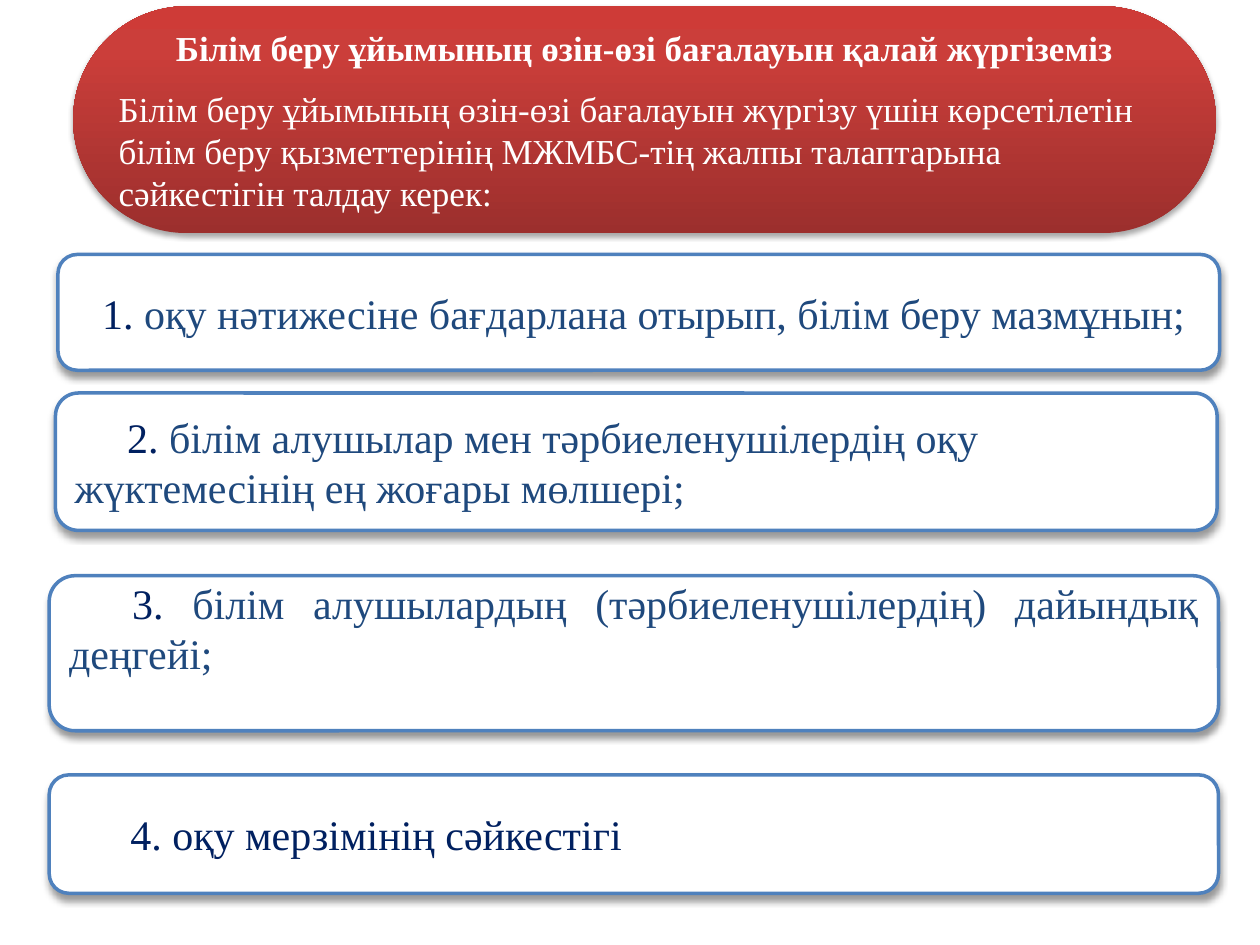
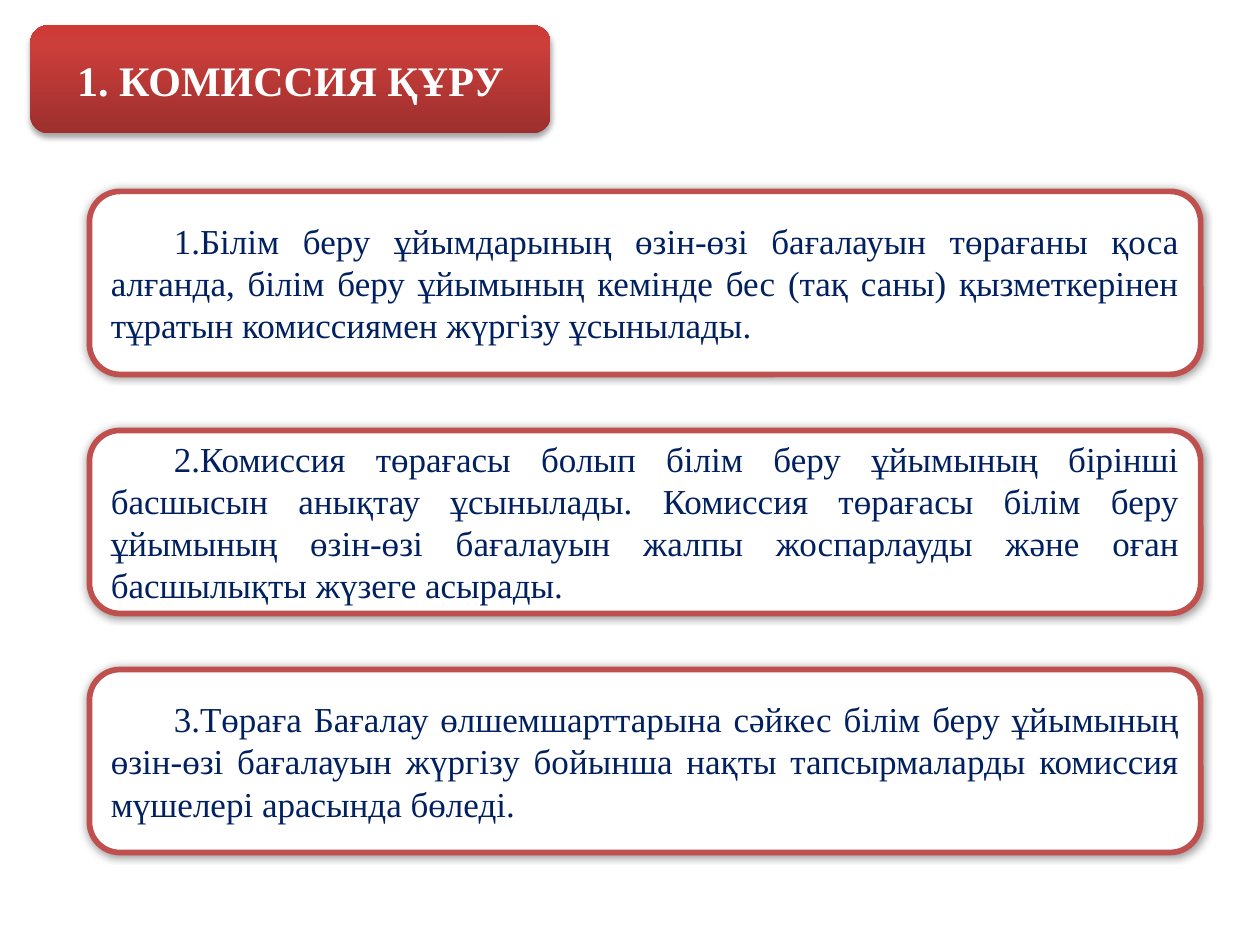
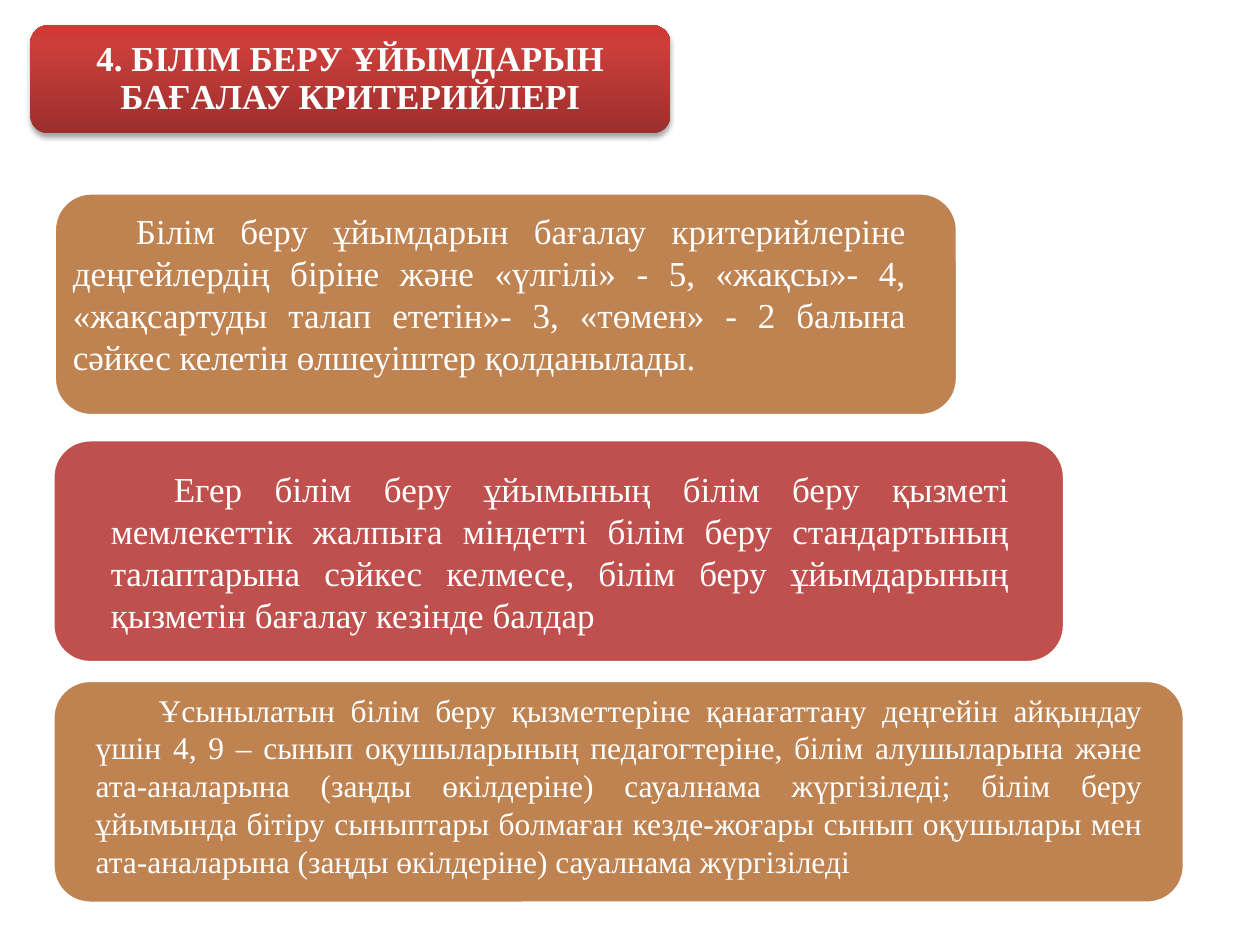
"""Builds three slides on how an education organisation assesses itself."""
from copy import deepcopy

from lxml import etree
from pptx import Presentation
from pptx.dml.color import RGBColor
from pptx.enum import shapes, text
from pptx.oxml.ns import qn
from pptx.util import Pt

FONT = "Times New Roman"
WHITE = RGBColor(0xFF, 0xFF, 0xFF)
NAVY = RGBColor(0x00, 0x20, 0x60)
STEEL = RGBColor(0x1F, 0x49, 0x7D)
BLUE = RGBColor(0x4F, 0x81, 0xBD)
RED = RGBColor(0xC0, 0x50, 0x4D)
BROWN = RGBColor(0xBE, 0x83, 0x51)
TITLE_STOPS = [(0, RGBColor(0x9C, 0x2F, 0x2D)),
               (0.8, RGBColor(0xCB, 0x3E, 0x3A)),
               (1, RGBColor(0xCE, 0x3B, 0x37))]
TITLE_SHADOW = (35, 3.1, 1.8, 90)
ITEM_SHADOW = (40, 4, 3, 90)
STEP_SHADOW = (40, 5, 0, 0)
LEFT, CENTER, JUSTIFY = (text.PP_ALIGN.LEFT, text.PP_ALIGN.CENTER,
                         text.PP_ALIGN.JUSTIFY)
INDENT = 36
INSETS = (7.2, 3.6, 7.2, 3.6)

INTRO_TITLE = "Білім беру ұйымының өзін-өзі бағалауын қалай жүргіземіз"
INTRO = ("Білім беру ұйымының өзін-өзі бағалауын жүргізу үшін көрсетілетін "
         "білім беру қызметтерінің МЖМБС-тің жалпы талаптарына сәйкестігін "
         "талдау керек:")

# box, number, wording, wording colour, alignment, indent, bottom inset
ITEMS = [
    ((33.1, 145.4, 663.8, 66.2), "1. ",
     "оқу нәтижесіне бағдарлана отырып, білім беру мазмұнын;",
     STEEL, LEFT, 15, 3.6),
    ((31.7, 224.6, 663.8, 78.5), "2. ",
     "білім алушылар мен тәрбиеленушілердің оқу жүктемесінің ең жоғары "
     "мөлшері;", STEEL, LEFT, 30, 3.6),
    ((28.1, 329, 668.2, 88.6), "3. ",
     "білім алушылардың (тәрбиеленушілердің) дайындық деңгейі;",
     STEEL, JUSTIFY, INDENT, 32.6),
    ((28.1, 442.8, 668.2, 67.7), "4. ", "оқу мерзімінің сәйкестігі",
     NAVY, JUSTIFY, INDENT, 3.6),
]

COMMISSION_TITLE = "1. КОМИССИЯ ҚҰРУ"
COMMISSION_STEPS = [
    "1.Білім беру ұйымдарының өзін-өзі бағалауын төрағаны қоса алғанда, "
    "білім беру ұйымының кемінде бес (тақ саны) қызметкерінен тұратын "
    "комиссиямен жүргізу ұсынылады.",
    "2.Комиссия төрағасы болып білім беру ұйымының бірінші басшысын анықтау "
    "ұсынылады. Комиссия төрағасы білім беру ұйымының өзін-өзі бағалауын "
    "жалпы жоспарлауды және оған басшылықты жүзеге асырады.",
    "3.Төраға Бағалау өлшемшарттарына сәйкес білім беру ұйымының өзін-өзі "
    "бағалауын жүргізу бойынша нақты тапсырмаларды комиссия мүшелері "
    "арасында бөледі.",
]

CRITERIA_TITLE = "4. БІЛІМ БЕРУ ҰЙЫМДАРЫН БАҒАЛАУ КРИТЕРИЙЛЕРІ"
# panel box, panel colour, text box, size, wording
CRITERIA = [
    ((31, 110.2, 516.2, 127.4), BROWN, (37.4, 110.2, 484.6, 115.2), 20,
     "Білім беру ұйымдарын бағалау критерийлеріне деңгейлердің біріне және "
     "«үлгілі» - 5, «жақсы»- 4, «жақсартуды талап ететін»- 3, «төмен» - 2 "
     "балына сәйкес келетін өлшеуіштер қолданылады."),
    ((30.2, 251.3, 578.2, 127.4), RED, (59, 257.8, 522, 115.2), 20,
     "Егер білім беру ұйымының білім беру қызметі мемлекеттік жалпыға "
     "міндетті білім беру стандартының талаптарына сәйкес келмесе, білім "
     "беру ұйымдарының қызметін бағалау кезінде балдар"),
    ((30.2, 388.8, 646.6, 127.4), BROWN, (50.4, 391, 607, 115.2), 18,
     "Ұсынылатын білім беру қызметтеріне қанағаттану деңгейін айқындау үшін "
     "4, 9 – сынып оқушыларының педагогтеріне, білім алушыларына және "
     "ата-аналарына (заңды өкілдеріне) сауалнама жүргізіледі; білім беру "
     "ұйымында бітіру сыныптары болмаған кезде-жоғары сынып оқушылары мен "
     "ата-аналарына (заңды өкілдеріне) сауалнама жүргізіледі"),
]


def add_shadow(sp, opacity, blur, distance, angle):
    effects = sp._element.spPr.find(qn("a:effectLst"))
    outer = etree.SubElement(effects, qn("a:outerShdw"), {
        "blurRad": str(Pt(blur)), "dist": str(Pt(distance)),
        "dir": str(angle * 60000), "rotWithShape": "0"})
    color = etree.SubElement(outer, qn("a:srgbClr"), val="000000")
    etree.SubElement(color, qn("a:alpha"), val=str(opacity * 1000))


def add_card(s, box, fill=None, line=None, width=2, shadow=None):
    sp = s.shapes.add_shape(shapes.MSO_SHAPE.ROUNDED_RECTANGLE, *map(Pt, box))
    sp.shadow.inherit = False
    if fill is not None:
        sp.fill.solid()
        sp.fill.fore_color.rgb = fill
    if line is None:
        sp.line.fill.background()
    else:
        sp.line.color.rgb = line
        sp.line.width = Pt(width)
    if shadow:
        add_shadow(sp, *shadow)
    return sp


def set_frame(sp, insets=INSETS):
    tf = sp.text_frame
    tf.word_wrap = True
    tf.vertical_anchor = text.MSO_ANCHOR.MIDDLE
    (tf.margin_left, tf.margin_top,
     tf.margin_right, tf.margin_bottom) = map(Pt, insets)
    return tf


def write(p, runs, size, color, align=JUSTIFY, indent=INDENT, bold=False):
    p.alignment = align
    p.font.name, p.font.size, p.font.bold = FONT, Pt(size), bold
    p.font.color.rgb = color
    if indent:
        pPr = p._p.get_or_add_pPr()
        pPr.set("marL", "0")
        pPr.set("indent", str(Pt(indent)))
    for wording, run_color in runs:
        r = p.add_run()
        r.text = wording
        r.font.name, r.font.size, r.font.bold = FONT, Pt(size), bold
        r.font.color.rgb = run_color or color


def add_title(s, box, title, size):
    sp = add_card(s, box, shadow=TITLE_SHADOW)
    sp.fill.gradient()
    sp.fill.gradient_angle = 90
    stops = sp._element.spPr.find(".//" + qn("a:gsLst"))
    stops.append(deepcopy(stops[-1]))
    for stop, (position, color) in zip(sp.fill.gradient_stops, TITLE_STOPS):
        stop.position = position
        stop.color.rgb = color
    tf = set_frame(sp)
    write(tf.paragraphs[0], [(title, None)], size, WHITE, CENTER, 0, True)
    return sp


def intro_slide(s):
    for box, number, wording, color, align, indent, bottom in ITEMS:
        sp = add_card(s, box, WHITE, BLUE, shadow=ITEM_SHADOW)
        tf = set_frame(sp, (7.2, 3.6, 7.2, bottom))
        write(tf.paragraphs[0], [(number, None), (wording, color)],
              24, NAVY, align, indent)
    sp = add_title(s, (41.8, 3.6, 653, 129.6), INTRO_TITLE, 20)
    sp.adjustments[0] = 0.5
    tf = sp.text_frame
    tf.paragraphs[0].space_after = Pt(11)
    write(tf.add_paragraph(), [(INTRO, None)], 20, WHITE, LEFT, 0)


def commission_slide(s):
    for i, step in enumerate(COMMISSION_STEPS):
        box = (51.1, 109.4 + i * 136.6, 635, 104.6)
        sp = add_card(s, box, WHITE, RED, 3.25, STEP_SHADOW)
        write(set_frame(sp).paragraphs[0], [(step, None)], 20, NAVY)
    add_title(s, (17.3, 14.4, 297.4, 61.9), COMMISSION_TITLE, 24)


def criteria_slide(s):
    sp = add_title(s, (17.3, 14.4, 365.8, 61.9), CRITERIA_TITLE, 20)
    p = sp.text_frame.paragraphs[0]
    p.line_spacing, p.space_after = 0.9, Pt(6)
    for panel, fill, box, size, wording in CRITERIA:
        add_card(s, panel, fill, WHITE)
        tf = set_frame(s.shapes.add_textbox(*map(Pt, box)), (4.3,) * 4)
        write(tf.paragraphs[0], [(wording, None)], size, WHITE)


def main():
    prs = Presentation()
    prs.slide_width, prs.slide_height = Pt(720), Pt(540)
    for build in (intro_slide, commission_slide, criteria_slide):
        build(prs.slides.add_slide(prs.slide_layouts[6]))
    prs.save("out.pptx")


if __name__ == "__main__":
    main()
